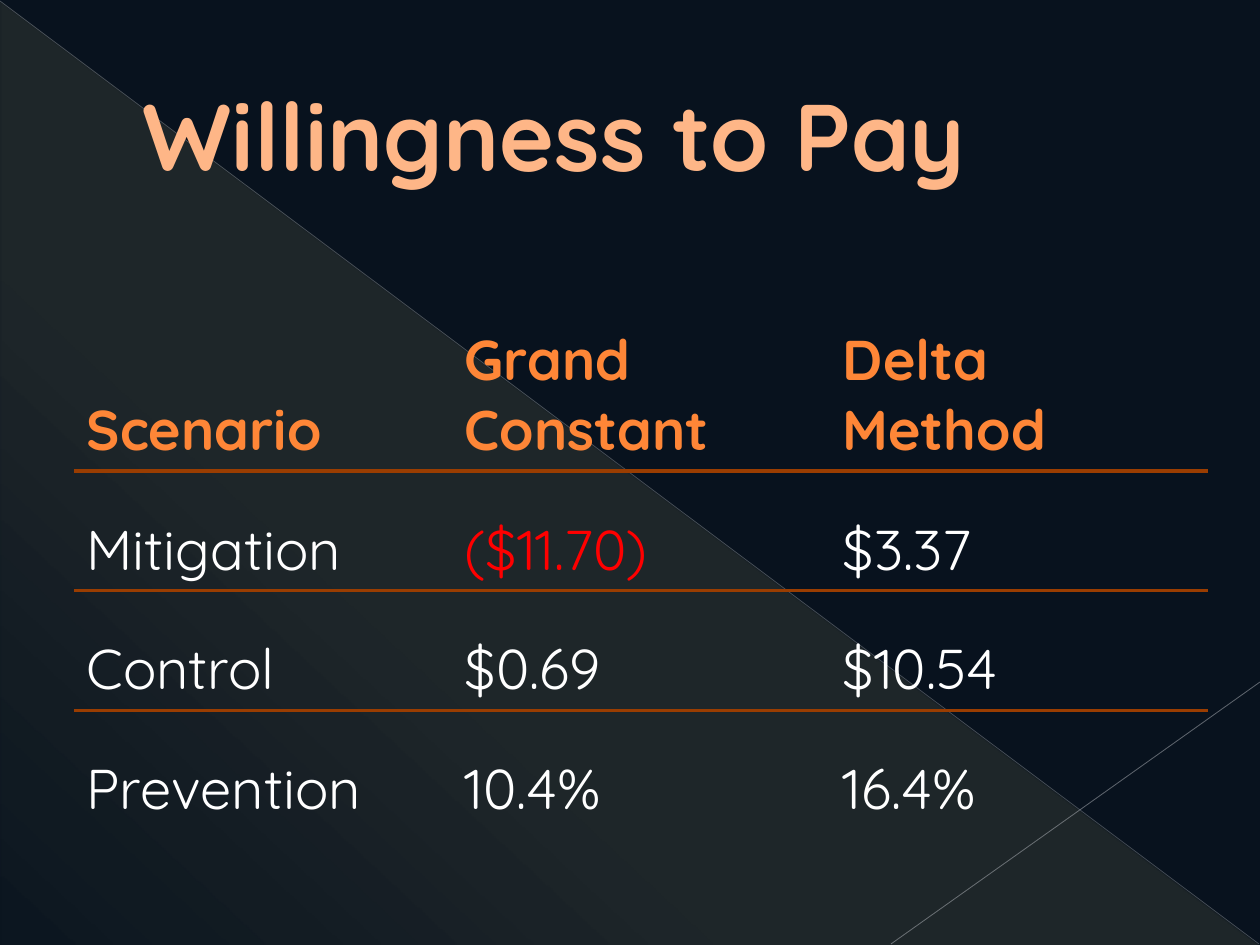
from lxml import etree
from pptx import Presentation, util as u
from pptx.dml.color import RGBColor
from pptx.enum import shapes, text
from pptx.oxml import parse_xml
from pptx.oxml.ns import nsdecls, qn

PX = 914400 / 126
FONT = "Quicksand"
C = {"bg": "08121E", "glow": "FFF39D", "diag": "BABDC4", "cross": "C1C4CA",
     "title": "FEB687", "rule": "9A3D01", "head": "FE8637",
     "body": "FFFFFF", "loss": "FF0000"}
NO_STYLE = "{2D5ABB26-0587-4C30-8999-92F81FD0307C}"
ROWS = [("Scenario", "Grand Constant", "Delta Method"),
        ("Mitigation", "($11.70)", "$3.37"),
        ("Control", "$0.69", "$10.54"),
        ("Prevention", "10.4%", "16.4%")]


def px(n):
    return u.Emu(round(n * PX))


def rgb(name):
    return RGBColor.from_string(C[name])


def add_run(p, content, size, color, bold):
    r = p.add_run()
    r.text = content
    r.font.name = FONT
    r.font.size = u.Pt(size)
    r.font.bold = bold
    r.font.color.rgb = rgb(color)
    return r


def line_xml(tag, color, width):
    return parse_xml(
        f'<a:{tag} {nsdecls("a")} w="{u.Pt(width)}"><a:solidFill>'
        f'<a:srgbClr val="{C[color]}"/></a:solidFill></a:{tag}>')


def add_line(s, x1, y1, x2, y2, color, width, alpha):
    ln = s.shapes.add_connector(shapes.MSO_CONNECTOR.STRAIGHT,
                                px(x1), px(y1), px(x2), px(y2))
    ln.line.width = u.Pt(width)
    ln.line.color.rgb = rgb(color)
    clr = ln._element.spPr.find(".//" + qn("a:srgbClr"))
    etree.SubElement(clr, qn("a:alpha")).set("val", str(alpha * 1000))
    etree.SubElement(ln._element.spPr, qn("a:effectLst"))


def add_backdrop(s, x, y, w, h):
    s.background.fill.solid()
    s.background.fill.fore_color.rgb = rgb("bg")
    sp = s.shapes.add_shape(shapes.MSO_SHAPE.RIGHT_TRIANGLE,
                            px(x + 1), px(y + 2), px(w - 2), px(h - 2))
    sp.shadow.inherit = False
    sp.line.fill.background()
    sp.fill.gradient()
    stops = "".join(
        f'<a:gs pos="{pos * 1000}"><a:srgbClr val="{C["glow"]}">'
        f'<a:alpha val="{alpha * 1000}"/></a:srgbClr></a:gs>'
        for pos, alpha in [(0, 10), (70, 8), (100, 1)])
    spPr = sp._element.spPr
    spPr.replace(spPr.find(qn("a:gradFill")), parse_xml(
        f'<a:gradFill {nsdecls("a")} rotWithShape="1"><a:gsLst>{stops}</a:gsLst>'
        f'<a:lin ang="{133 * 60000}" scaled="0"/></a:gradFill>'))
    add_line(s, x, y + 1, x + w - 1, y + h - 1, "diag", 0.39, 35)
    add_line(s, x + w, y + 682, x + 891, y + h - 1, "cross", 0.47, 45)


def add_title(s, x, y, w, h):
    sp = s.shapes.title
    sp.left, sp.top, sp.width, sp.height = px(x), px(y), px(w), px(h)
    tf = sp.text_frame
    tf.word_wrap = True
    tf.auto_size = text.MSO_AUTO_SIZE.NONE
    tf.vertical_anchor = text.MSO_ANCHOR.MIDDLE
    p = tf.paragraphs[0]
    p.alignment = text.PP_ALIGN.LEFT
    pPr = p._p.get_or_add_pPr()
    pPr.set("marL", str(px(67)))
    pPr.set("indent", "0")
    r = add_run(p, "Willingness to Pay", 54, "title", True)
    r.font._element.insert(0, line_xml("ln", "rule", 1))
    s.shapes._spTree.append(sp._element)


def add_results(s, x, y, w, h):
    head_h = 219
    row_h = (h - head_h) / (len(ROWS) - 1)
    frame = s.shapes.add_table(len(ROWS), len(ROWS[0]), px(x), px(y), px(w), px(h))
    tbl = frame.table
    tbl.first_row = tbl.horz_banding = False
    tbl._tbl.tblPr.find(qn("a:tableStyleId")).text = NO_STYLE
    for col in tbl.columns:
        col.width = px(w / len(ROWS[0]))
    for i, values in enumerate(ROWS):
        tbl.rows[i].height = px(row_h if i else head_h)
        for j, value in enumerate(values):
            cell = tbl.cell(i, j)
            cell.fill.background()
            cell.vertical_anchor = text.MSO_ANCHOR.BOTTOM
            color = "head" if i == 0 else "loss" if value.startswith("(") else "body"
            add_run(cell.text_frame.paragraphs[0], value, 32, color, i == 0)
            tcPr = cell._tc.get_or_add_tcPr()
            if i < 2:
                tcPr.insert(0, line_xml("lnB", "rule", 2.25))
            if i in (1, 2):
                tcPr.insert(0, line_xml("lnT", "rule", 2.25))


def main():
    prs = Presentation()
    prs.slide_width, prs.slide_height = px(1260), px(945)
    s = prs.slides.add_slide(prs.slide_layouts[5])
    add_backdrop(s, 0, 0, 1260, 945)
    add_title(s, 63, 37, 1134, 193)
    add_results(s, 74, 252, 1134, 578)
    prs.save("out.pptx")


if __name__ == "__main__":
    main()
